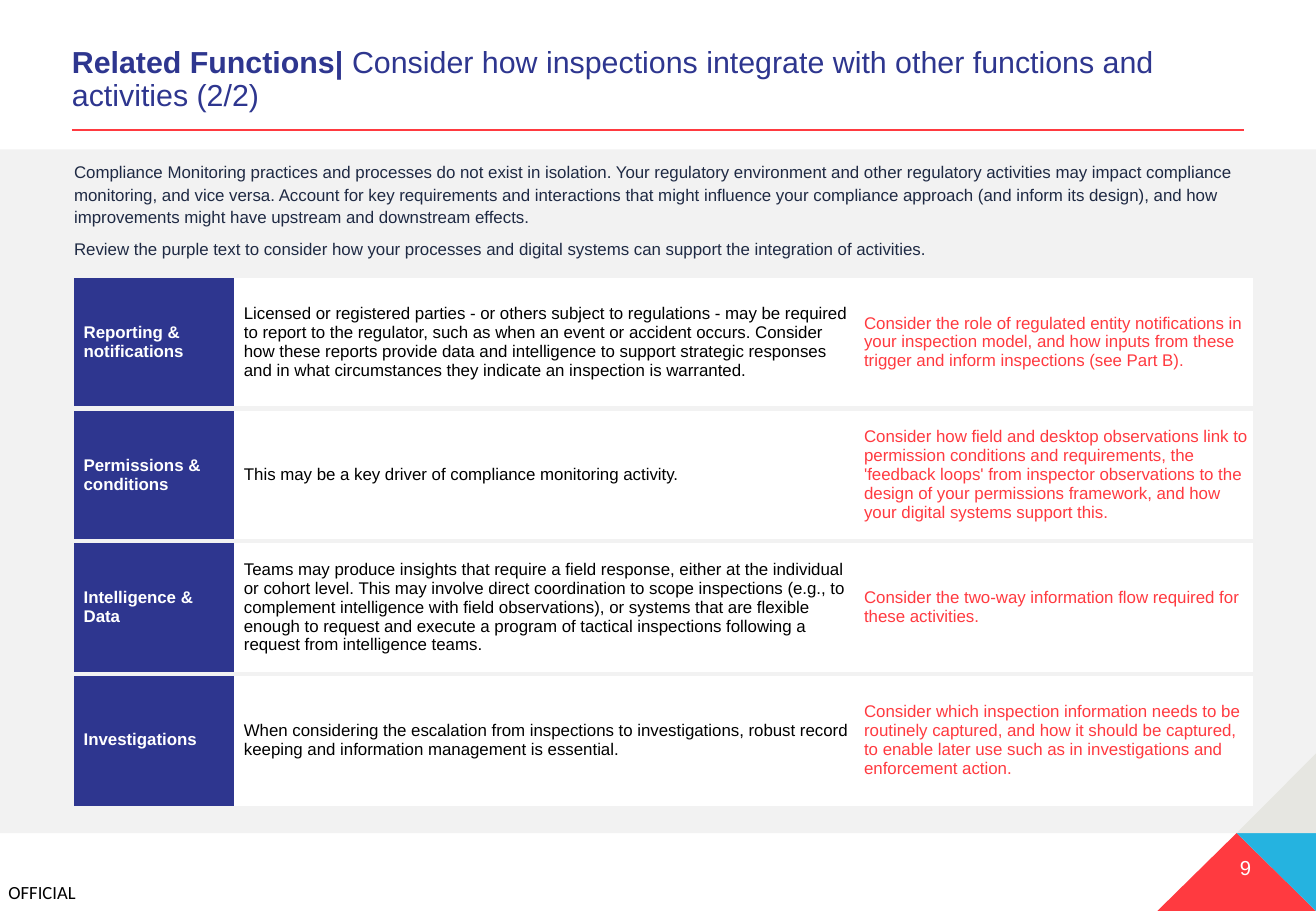
from pptx import Presentation
from pptx.dml.color import RGBColor
from pptx.enum.shapes import MSO_CONNECTOR as Link, MSO_SHAPE as Kind
from pptx.enum.text import MSO_ANCHOR as Anchor, PP_ALIGN as Align
from pptx.oxml.ns import qn
from pptx.util import Pt
from lxml.etree import SubElement

HUES = {
    "navy": "2E368F", "red": "FF3A40", "blue": "25B3E0", "sand": "E6E6E1",
    "grey": "F2F2F2", "white": "FFFFFF", "black": "000000", "ink": "1F2A44",
}
PLAIN = "{2D5ABB26-0587-4C30-8999-92F81FD0307C}"
TITLE = [
    ("Related Functions| ", True),
    ("Consider how inspections integrate with other functions and activities (2/2)", False),
]
INTRO = [
    "Compliance Monitoring practices and processes do not exist in isolation. Your regulatory "
    "environment and other regulatory activities may impact compliance monitoring, and vice versa. "
    "Account for key requirements and interactions that might influence your compliance approach "
    "(and inform its design), and how improvements might have upstream and downstream effects.",
    "Review the purple text to consider how your processes and digital systems can support the "
    "integration of activities.",
]
ROWS = [
    ("Reporting & notifications",
     "Licensed or registered parties - or others subject to regulations - may be required to report "
     "to the regulator, such as when an event or accident occurs. Consider how these reports provide "
     "data and intelligence to support strategic responses and in what circumstances they indicate "
     "an inspection is warranted.",
     "Consider the role of regulated entity notifications in your inspection model, and how inputs "
     "from these trigger and inform inspections (see Part B)."),
    ("Permissions & conditions",
     "This may be a key driver of compliance monitoring activity.",
     "Consider how field and desktop observations link to permission conditions and requirements, "
     "the 'feedback loops' from inspector observations to the design of your permissions framework, "
     "and how your digital systems support this."),
    ("Intelligence & Data",
     "Teams may produce insights that require a field response, either at the individual or cohort "
     "level. This may involve direct coordination to scope inspections (e.g., to complement "
     "intelligence with field observations), or systems that are flexible enough to request and "
     "execute a program of tactical inspections following a request from intelligence teams.",
     "Consider the two-way information flow required for these activities."),
    ("Investigations",
     "When considering the escalation from inspections to investigations, robust record keeping and "
     "information management is essential.",
     "Consider which inspection information needs to be routinely captured, and how it should be "
     "captured, to enable later use such as in investigations and enforcement action."),
]
COLS = [(95, "navy", "white", True), (367.6, "white", "black", False), (236, "white", "red", False)]


def hue(name):
    return RGBColor.from_string(HUES[name])


def style(font, size, color, bold=False, face="Arial"):
    font.name, font.size, font.bold = face, Pt(size), bold
    font.color.rgb = hue(color)


def paint(shape, color):
    shape.shadow.inherit = False
    shape.fill.solid()
    shape.fill.fore_color.rgb = hue(color)
    shape.line.fill.background()


def place(shape, left, top, width, height):
    shape.left, shape.top = Pt(left), Pt(top)
    shape.width, shape.height = Pt(width), Pt(height)


def pad(frame, inset):
    frame.margin_left = frame.margin_right = 0
    frame.margin_top = frame.margin_bottom = Pt(inset)


def add_text(slide, box, texts, size, color, face="Arial", inset=3.6, wrap=True):
    frame = slide.shapes.add_textbox(*map(Pt, box)).text_frame
    frame.word_wrap = wrap
    pad(frame, inset)
    frame.text = "\n".join(texts)
    for para in frame.paragraphs:
        style(para.font, size, color, face=face)
    return frame.paragraphs


def add_band(slide):
    band = slide.shapes.add_shape(Kind.RECTANGLE, 0, Pt(88.6), Pt(780), Pt(405.2))
    paint(band, "grey")


def add_wedge(slide, points, color):
    start, *rest = [(Pt(x), Pt(y)) for x, y in points]
    form = slide.shapes.build_freeform(*start)
    form.add_line_segments(rest)
    paint(form.convert_to_shape(), color)


def add_rule(slide):
    rule = slide.shapes.add_connector(Link.STRAIGHT, Pt(42.6), Pt(77), Pt(737.3), Pt(77))
    rule.line.color.rgb = hue("red")
    rule.line.width = Pt(1.25)
    SubElement(rule._element.spPr, qn("a:effectLst"))


def add_title(slide):
    title = slide.shapes.title
    place(title, 42.6, 23.8, 694.7, 46.8)
    frame = title.text_frame
    frame.word_wrap = True
    frame.vertical_anchor = Anchor.BOTTOM
    pad(frame, 3.6)
    para = frame.paragraphs[0]
    para.alignment = Align.LEFT
    para.line_spacing = 0.9
    for text, bold in TITLE:
        run = para.add_run()
        run.text = text
        style(run.font, 18, "navy", bold)


def add_edge(cell, side):
    edge = SubElement(cell._tc.get_or_add_tcPr(), qn("a:" + side), w=str(Pt(3)))
    fill = SubElement(edge, qn("a:solidFill"))
    SubElement(fill, qn("a:srgbClr"), val=HUES["grey"])


def fill_cell(cell, text, back, color, bold, sides):
    cell.text = text
    cell.vertical_anchor = Anchor.MIDDLE
    cell.margin_left, cell.margin_right = Pt(5.67), Pt(2.83)
    cell.margin_top = cell.margin_bottom = Pt(1.42)
    style(cell.text_frame.paragraphs[0].font, 10, color, bold)
    for side in sides:
        add_edge(cell, side)
    cell.fill.solid()
    cell.fill.fore_color.rgb = hue(back)


def add_grid(slide):
    box = map(Pt, (43.9, 163.5, 698.6, 314.6))
    table = slide.shapes.add_table(len(ROWS), len(COLS), *box).table
    table.first_row = table.horz_banding = False
    table._tbl.tblPr.find(qn("a:tableStyleId")).text = PLAIN
    for col, (width, *_) in zip(table.columns, COLS):
        col.width = Pt(width)
    for i, texts in enumerate(ROWS):
        sides = ["lnT", "lnB"] if i < len(ROWS) - 1 else ["lnT"]
        for j, text in enumerate(texts):
            fill_cell(table.cell(i, j), text, *COLS[j][1:], sides)


def main():
    deck = Presentation()
    deck.slide_width, deck.slide_height = Pt(780), Pt(540)
    slide = deck.slides.add_slide(deck.slide_layouts[5])
    add_text(slide, (5, 522, 42.5, 13), ["OFFICIAL"], 11, "black", "Calibri", 0, False)
    add_band(slide)
    add_wedge(slide, [(733, 493.8), (686, 540), (780, 540)], "red")
    add_wedge(slide, [(780, 493.8), (733, 493.8), (780, 540)], "blue")
    add_wedge(slide, [(780, 446.6), (733, 493.8), (780, 493.8)], "sand")
    number = add_text(slide, (679, 503.3, 62.6, 21.6), ["9"], 12, "white")
    number[0].alignment = Align.RIGHT
    add_rule(slide)
    add_title(slide)
    add_grid(slide)
    intro = add_text(slide, (43.9, 91.4, 692.6, 69.8), INTRO, 10, "ink")
    for para in intro:
        para.line_spacing = 1.1
    intro[1].space_before = Pt(6)
    deck.save("out.pptx")


if __name__ == "__main__":
    main()
